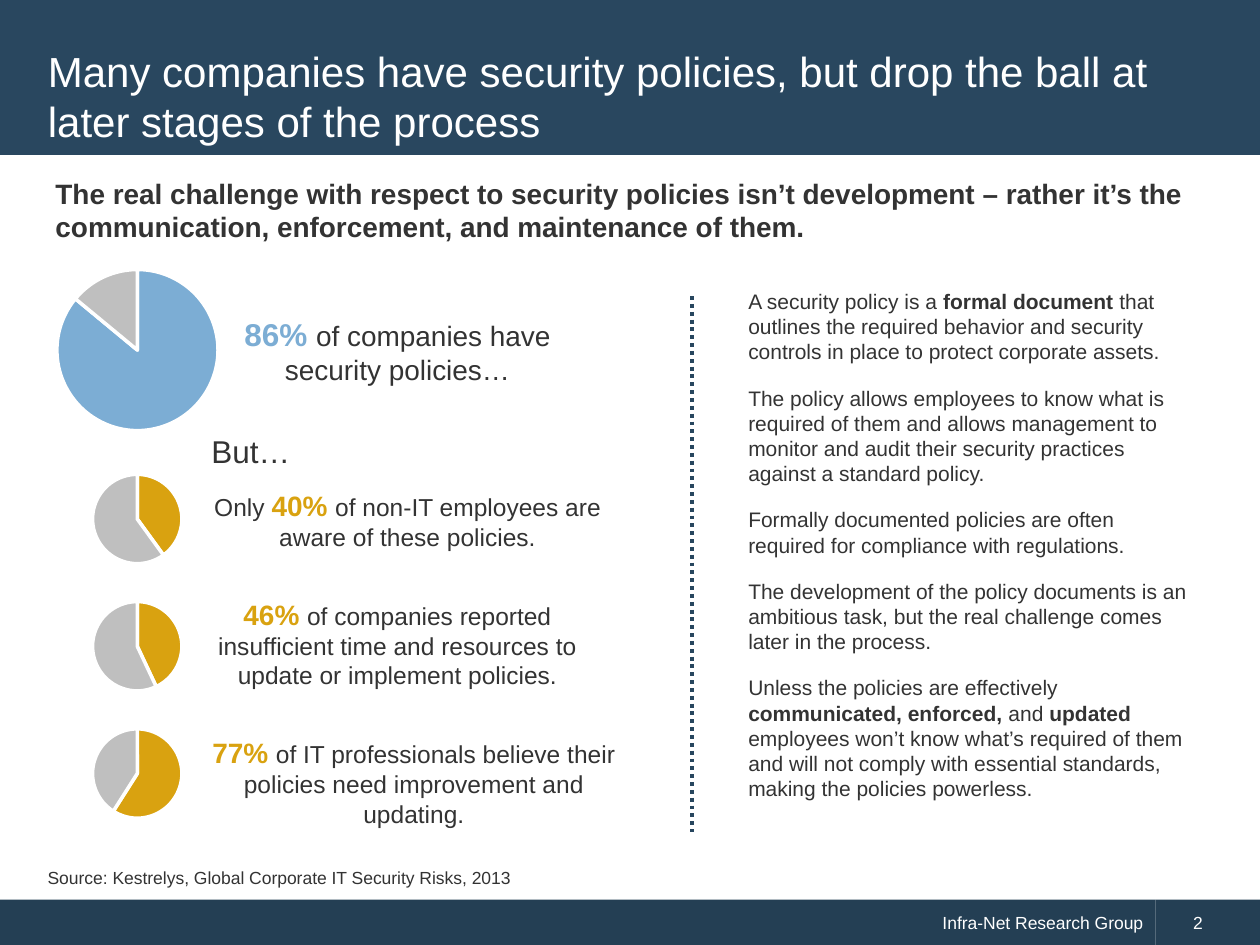
from lxml import etree
from pptx import Presentation
from pptx.chart.data import CategoryChartData
from pptx.dml.color import RGBColor
from pptx.enum import chart as ch, dml, shapes, text
from pptx.oxml import parse_xml
from pptx.oxml.ns import nsdecls, qn
from pptx.util import Inches, Pt

COLORS = {"header": "29475F", "footer": "243F54", "divider": "27465E",
          "blue": "7CADD4", "gold": "D9A210", "grey": "BFBFBF",
          "text": "333333", "white": "FFFFFF"}
FONT = "Arial"

TITLE = "Many companies have security policies, but drop the ball at later stages of the process"
SUBTITLE = ("The real challenge with respect to security policies isn’t development – "
            "rather it’s the communication, enforcement, and maintenance of them.")
# Text box, then (text before, figure, text after), figure size, other size, colour
STATS = [
    ((1.45, 2.45, 3.41, 0.67), ("", "86% ", "of companies have security policies…"),
     18, 16, "blue"),
    ((1.53, 3.83, 3.41, 0.61), ("Only ", "40% ", "of non-IT employees are aware of these policies."),
     16, 14, "gold"),
    ((1.45, 4.69, 3.41, 0.84), ("", "46% ", "of companies reported insufficient time and resources "
                                "to update or implement policies."), 16, 14, "gold"),
    ((1.58, 5.79, 3.41, 0.84), ("", "77% ", "of IT professionals believe their policies need "
                                "improvement and updating."), 16, 14, "gold"),
]
# Centre y, frame width, frame height, diameter, share, colour
PIE_X = 1.09
PIES = [(2.78, 2.35, 1.57, 1.28, 86, "blue")] + [
    (4.12 + 1.01 * i, 1.5, 1, 0.71, share, "gold") for i, share in enumerate((40, 43, 59))]
# Every second part of a paragraph is bold
NOTES = [
    ["A security policy is a ", "formal document ",
     "that outlines the required behavior and security controls in place to protect "
     "corporate assets."],
    ["The policy allows employees to know what is required of them and allows management "
     "to monitor and audit their security practices against a standard policy."],
    ["Formally documented policies are often required for compliance with regulations."],
    ["The development of the policy documents is an ambitious task, but the real challenge "
     "comes later in the process."],
    ["Unless the policies are effectively ", "communicated, enforced, ", "and ", "updated ",
     "employees won’t know what’s required of them and will not comply with essential "
     "standards, making the policies powerless."],
]


def rgb(name):
    return RGBColor.from_string(COLORS[name])


def style(font, size, color="text", bold=None):
    font.name, font.size, font.bold = FONT, Pt(size), bold
    font.color.rgb = rgb(color)


def place(sp, box):
    sp.left, sp.top, sp.width, sp.height = map(Inches, box)


def add_text(s, box, content="", size=10):
    tf = s.shapes.add_textbox(*map(Inches, box)).text_frame
    tf.word_wrap = True
    tf.auto_size = text.MSO_AUTO_SIZE.SHAPE_TO_FIT_TEXT
    p = tf.paragraphs[0]
    p.text = content
    style(p.font, size)
    return tf


def add_bar(s, box, color, label="", align=text.PP_ALIGN.LEFT):
    sp = s.shapes.add_shape(shapes.MSO_SHAPE.RECTANGLE, *map(Inches, box))
    sp.shadow.inherit = False
    sp.fill.solid()
    sp.fill.fore_color.rgb = rgb(color)
    sp.line.fill.background()
    tf = sp.text_frame
    tf.vertical_anchor = text.MSO_ANCHOR.MIDDLE
    p = tf.paragraphs[0]
    p.text, p.alignment = label, align
    style(p.font, 10, "white")
    return sp


def add_stat(s, box, parts, big, small, color):
    p = add_text(s, box).paragraphs[0]
    p.alignment = text.PP_ALIGN.CENTER
    for i, part in enumerate(parts):
        if part:
            r = p.add_run()
            r.text = part
            if i == 1:
                style(r.font, big, color, True)
            else:
                style(r.font, small)


def add_pie(s, y, width, height, diameter, share, color):
    """Add a pie centred on y, with its plot area fixed to the diameter."""
    data = CategoryChartData()
    data.categories = ["1", "2", "3", "4"]
    data.add_series("Series 1", [share, 100 - share, None, None])
    box = (PIE_X - width / 2, y - height / 2, width, height)
    chart = s.shapes.add_chart(ch.XL_CHART_TYPE.PIE, *map(Inches, box), data).chart
    chart.has_legend = chart.has_title = False
    style(chart.font, 10)
    plot = chart.plots[0]
    plot.vary_by_categories = False
    for i, name in enumerate((color, "grey", "blue", "white")):
        fmt = plot.series[0].points[i].format
        fmt.fill.solid()
        fmt.fill.fore_color.rgb = rgb(name)
        fmt.line.color.rgb = rgb("white")
        fmt.line.width = Pt(2)
    w, h = diameter / width, diameter / height
    area = chart.element.find(".//" + qn("c:plotArea"))
    for old in area.findall(qn("c:layout")):
        area.remove(old)
    area.insert(0, parse_xml(
        f'<c:layout {nsdecls("c")}><c:manualLayout><c:layoutTarget val="inner"/>'
        '<c:xMode val="edge"/><c:yMode val="edge"/>'
        f'<c:x val="{(1 - w) / 2:.3f}"/><c:y val="{(1 - h) / 2:.3f}"/>'
        f'<c:w val="{w:.3f}"/><c:h val="{h:.3f}"/></c:manualLayout></c:layout>'))


def main():
    prs = Presentation()
    prs.slide_width, prs.slide_height = Inches(10), Inches(7.5)
    s = prs.slides.add_slide(prs.slide_layouts[1])

    add_bar(s, (0, 7.14, 9.17, 0.37), "footer", "Infra-Net Research Group",
            text.PP_ALIGN.RIGHT)
    page = add_bar(s, (9.17, 7.14, 0.83, 0.37), "footer", "2")
    page.text_frame.margin_left = Inches(0.3)
    header = add_bar(s, (0, 0, 10, 1.23), "header")

    title, body = s.shapes.title, s.placeholders[1]
    header.element.addnext(title.element)
    for sp, box, content, size, color, bold in (
            (title, (0.28, 0.28, 9.43, 0.96), TITLE, 24, "white", False),
            (body, (0.34, 1.35, 9.43, 0.72), SUBTITLE, 16, "text", True)):
        place(sp, box)
        tf = sp.text_frame
        tf.text = content
        tf.auto_size = text.MSO_AUTO_SIZE.NONE
        p = tf.paragraphs[0]
        p.alignment = text.PP_ALIGN.LEFT
        style(p.font, size, color, bold)
    title.text_frame.vertical_anchor = text.MSO_ANCHOR.MIDDLE
    p = body.text_frame.paragraphs[0]
    p.space_before = Pt(3)
    pPr = p._p.get_or_add_pPr()
    pPr.set("marL", "0")
    pPr.set("indent", "0")
    pPr.insert_element_before(parse_xml(f'<a:buNone {nsdecls("a")}/>'), "a:defRPr")

    line = s.shapes.add_connector(shapes.MSO_CONNECTOR.STRAIGHT, Inches(5.49), Inches(2.35),
                                  Inches(5.49), Inches(6.6))
    line.line.color.rgb = rgb("divider")
    line.line.width = Pt(2.25)
    line.line.dash_style = dml.MSO_LINE.ROUND_DOT
    etree.SubElement(line.element.spPr, qn("a:effectLst"))

    for stat in STATS:
        add_stat(s, *stat)
    add_text(s, (1.58, 3.38, 1.94, 0.4), "But…", 18)
    add_text(s, (0.28, 6.83, 4.13, 0.27),
             "Source: Kestrelys, Global Corporate IT Security Risks, 2013")

    tf = add_text(s, (5.84, 2.24, 3.71, 4.21))
    for n, parts in enumerate(NOTES):
        p = tf.add_paragraph() if n else tf.paragraphs[0]
        p.space_before = p.space_after = Pt(6)
        style(p.font, 12)
        for i, part in enumerate(parts):
            r = p.add_run()
            r.text = part
            style(r.font, 12, bold=i % 2 == 1)

    for pie in PIES:
        add_pie(s, *pie)
    prs.save("out.pptx")


if __name__ == "__main__":
    main()
